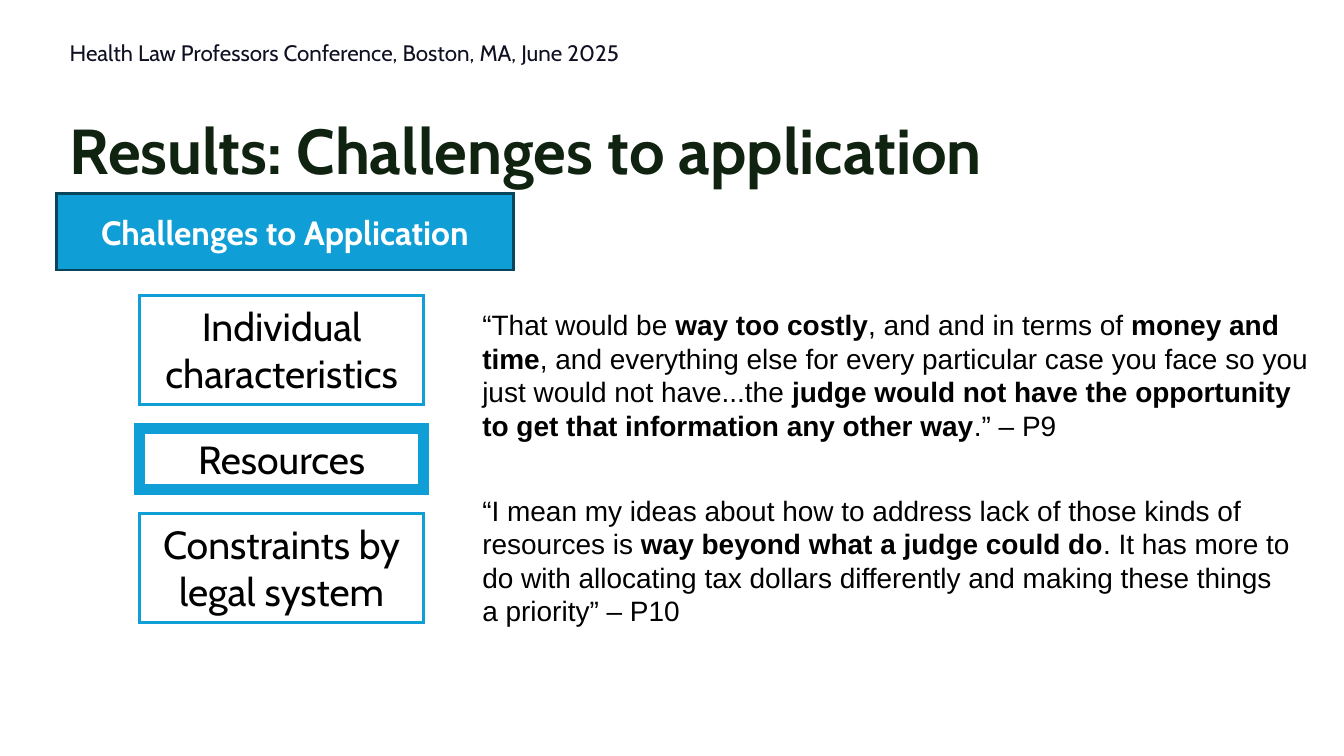
from lxml import etree
from pptx import Presentation
from pptx.dml.color import RGBColor
from pptx.enum.shapes import MSO_SHAPE
from pptx.enum.text import MSO_ANCHOR, PP_ALIGN
from pptx.oxml.ns import qn
from pptx.util import Pt

PX = 9144  # 100 px to the inch
RECT = MSO_SHAPE.RECTANGLE
TOP, MIDDLE, BOTTOM = MSO_ANCHOR.TOP, MSO_ANCHOR.MIDDLE, MSO_ANCHOR.BOTTOM
LEFT, CENTER = PP_ALIGN.LEFT, PP_ALIGN.CENTER

BLACK = RGBColor(0x00, 0x00, 0x00)
WHITE = RGBColor(0xFF, 0xFF, 0xFF)
BLUE = RGBColor(0x0F, 0x9E, 0xD5)
DARK_BLUE = RGBColor(0x07, 0x45, 0x5D)
GREEN = RGBColor(0x10, 0x23, 0x10)
NAVY = RGBColor(0x10, 0x10, 0x23)

# Content
VENUE = "Health Law Professors Conference, Boston, MA, June 2025"
TITLE = "Results: Challenges to application"
HEADING = "Challenges to Application"
# label, height, line width
CHALLENGES = [
    ("Individual characteristics", 81, 1.5),
    ("Resources", 45, 6),
    ("Constraints by legal system", 81, 1.5),
]
# top, width, runs (every second run is bold)
QUOTES = [
    (224, 638, [
        "“That would be ", "way too costly", ", and and in terms of ",
        "money and time",
        ", and everything else for every particular case you face so you "
        "just would not have...the ",
        "judge would not have the opportunity to get that information any other way",
        ".” – P9",
    ]),
    (362, 623, [
        "“I mean my ideas about how to address lack of those kinds of resources is ",
        "way beyond what a judge could do",
        ". It has more to do with allocating tax dollars differently and "
        "making these things a priority” – P10",
    ]),
]

prs = Presentation()
prs.slide_width = 1000 * PX
prs.slide_height = prs.slide_width * 9 // 16
s = prs.slides.add_slide(prs.slide_layouts[6])


def add_text(runs, x, y, w, h, *, size, color=BLACK, font="Cabin", bold=False,
             align=LEFT, anchor=TOP, inset=5, fill=None, line=None, line_width=1.5):
    """Add text, in a rectangle if a fill is given; odd runs are bold."""
    at = [v * PX for v in (x, y, w, h)]
    if fill is None:
        sp = s.shapes.add_textbox(*at)
    else:
        sp = s.shapes.add_shape(RECT, *at)
        sp.shadow.inherit = False
        sp.fill.solid()
        sp.fill.fore_color.rgb = fill
        sp.line.color.rgb = line
        sp.line.width = Pt(line_width)
        # Square corners
        ln = sp.element.spPr.find(qn("a:ln"))
        etree.SubElement(ln, qn("a:miter"), lim="800000")
    tf = sp.text_frame
    tf.word_wrap = True
    tf.vertical_anchor = anchor
    tf.margin_left = tf.margin_right = 10 * PX
    tf.margin_top = tf.margin_bottom = inset * PX
    p = tf.paragraphs[0]
    p.alignment = align
    for i, text in enumerate(runs):
        r = p.add_run()
        r.text = text
        r.font.name, r.font.size = font, Pt(size)
        r.font.bold = bold or i % 2 == 1
        r.font.color.rgb = color
    return p


# Title and heading bar
add_text([TITLE], 42, 77, 916, 72, size=34, color=GREEN, bold=True,
         anchor=BOTTOM, inset=10)
add_text([HEADING], 42, 144, 340, 57, size=18, color=WHITE, bold=True,
         align=CENTER, anchor=MIDDLE, inset=10, fill=BLUE, line=DARK_BLUE)

# Stack of challenges
y, gap = 220, 18
for label, height, line_width in CHALLENGES:
    add_text([label], 104, y, 211, height, size=21, align=CENTER,
             fill=WHITE, line=BLUE, line_width=line_width)
    y += height + gap

# Quotes
for top, width, runs in QUOTES:
    add_text(runs, 349, top, width, 111, size=15, font="Arial")

# Venue line
p = add_text([VENUE], 42, 23, 458, 35, size=12, color=NAVY, anchor=MIDDLE, inset=10)
p.line_spacing = 0.9

prs.save("out.pptx")
